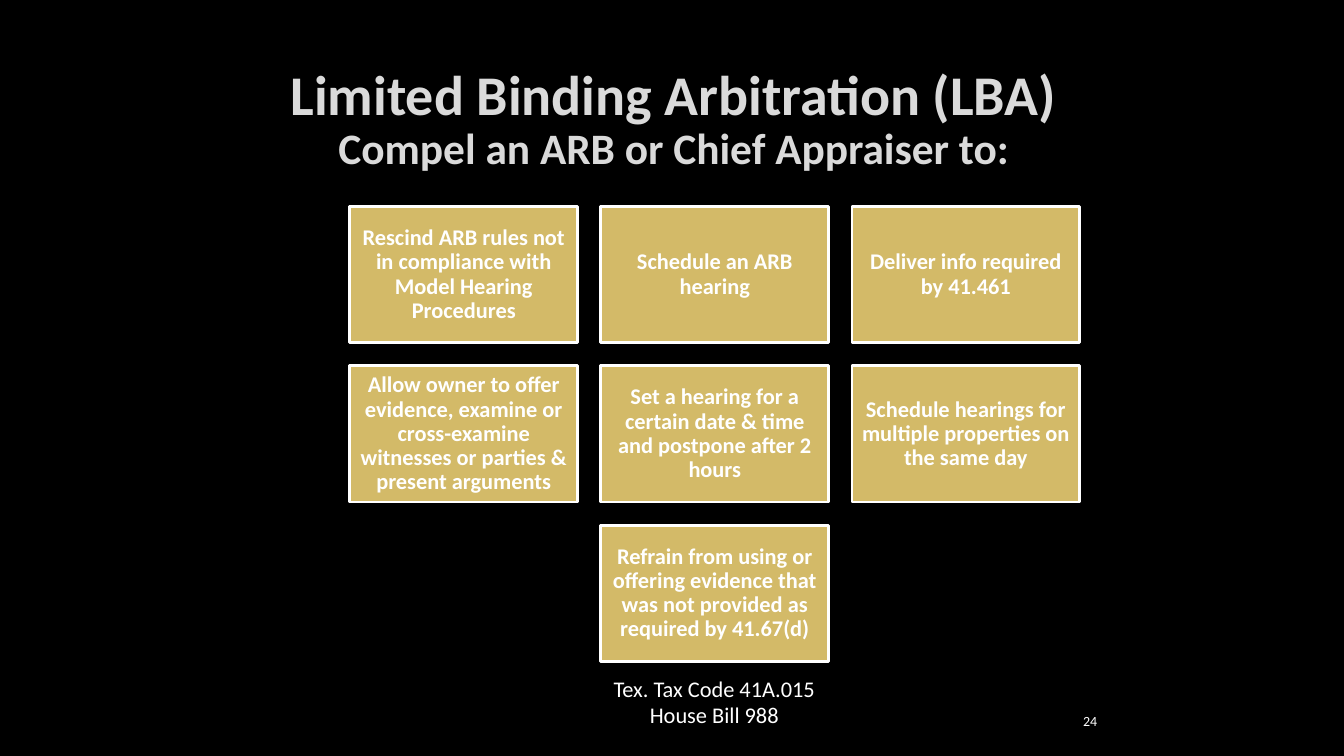
from pptx import Presentation
from pptx.dml.color import RGBColor
from pptx.enum.shapes import MSO_SHAPE
from pptx.enum.text import MSO_ANCHOR, MSO_AUTO_SIZE, PP_ALIGN
from pptx.util import Inches, Pt

RECT = MSO_SHAPE.RECTANGLE
MIDDLE, BOTTOM = MSO_ANCHOR.MIDDLE, MSO_ANCHOR.BOTTOM
CENTER, RIGHT = PP_ALIGN.CENTER, PP_ALIGN.RIGHT
NO_FIT = MSO_AUTO_SIZE.NONE
TITLE_ONLY = 5
COLORS = {"back": "000000", "title": "DADADA", "card": "D3BA68", "text": "FFFFFF"}
FONT = "Calibri"

GRID_LEFT, GRID_TOP, COLUMNS = 3.47, 2.05, 3
CARD_W, CARD_H, GAP = 2.26, 1.35, 0.23
CARD_ROWS = [
    [
        "Rescind ARB rules not in compliance with Model Hearing Procedures",
        "Schedule an ARB hearing",
        "Deliver info required by 41.461",
    ],
    [
        "Allow owner to offer evidence, examine or cross-examine witnesses "
        "or parties & present arguments",
        "Set a hearing for a certain date & time and postpone after 2 hours",
        "Schedule hearings for multiple properties on the same day",
    ],
    [
        "Refrain from using or offering evidence that was not provided "
        "as required by 41.67(d)",
    ],
]


def rgb(name):
    """Return the named colour."""
    return RGBColor.from_string(COLORS[name])


def place(sp, left, top, width, height):
    """Move and size a shape, in inches."""
    sp.left, sp.top = Inches(left), Inches(top)
    sp.width, sp.height = Inches(width), Inches(height)


def style(p, size, color="text", bold=False, align=CENTER):
    """Format one paragraph."""
    p.alignment = align
    p.font.name, p.font.size, p.font.bold = FONT, Pt(size), bold
    p.font.color.rgb = rgb(color)


def add_title(s, box, lines):
    """Fill the title placeholder with lines of (text, size)."""
    sp = s.shapes.title
    place(sp, *box)
    tf = sp.text_frame
    tf.auto_size, tf.vertical_anchor = NO_FIT, BOTTOM
    p = tf.paragraphs[0]
    style(p, lines[0][1], "title", bold=True)
    p.line_spacing = 0.9
    for i, (text, size) in enumerate(lines):
        if i:
            p.add_line_break()
        r = p.add_run()
        r.text, r.font.size = text, Pt(size)


def add_card(s, left, top, text):
    """Add one filled card with centred text."""
    sp = s.shapes.add_shape(RECT, 0, 0, 0, 0)
    place(sp, left, top, CARD_W, CARD_H)
    sp.shadow.inherit = False
    sp.fill.solid()
    sp.fill.fore_color.rgb = rgb("card")
    sp.line.color.rgb = rgb("text")
    sp.line.width = Pt(2)
    tf = sp.text_frame
    tf.word_wrap, tf.vertical_anchor = True, MIDDLE
    tf.margin_left = tf.margin_right = Inches(0.07)
    tf.margin_top = tf.margin_bottom = Inches(0.07)
    p = tf.paragraphs[0]
    p.text = text
    style(p, 16, bold=True)
    p.line_spacing = 0.9


def add_cards(s):
    """Lay the cards out in centred rows."""
    for row, texts in enumerate(CARD_ROWS):
        first = (COLUMNS - len(texts)) / 2
        for col, text in enumerate(texts, 1):
            left = GRID_LEFT + (first + col - 1) * (CARD_W + GAP)
            add_card(s, left, GRID_TOP + row * (CARD_H + GAP), text)


def add_text(s, box, lines, size, align=CENTER):
    """Add a text box with one paragraph per line."""
    sp = s.shapes.add_textbox(0, 0, 0, 0)
    place(sp, *box)
    tf = sp.text_frame
    tf.word_wrap, tf.vertical_anchor = True, MIDDLE
    tf.text = "\n".join(lines)
    for p in tf.paragraphs:
        style(p, size, align=align)


def main():
    """Build and save the slide."""
    prs = Presentation()
    prs.slide_width, prs.slide_height = Inches(13.33), Inches(7.5)
    s = prs.slides.add_slide(prs.slide_layouts[TITLE_ONLY])
    s.background.fill.solid()
    s.background.fill.fore_color.rgb = rgb("back")
    add_title(s, (2.14, 0.29, 9.08, 1.49), [
        ("Limited Binding Arbitration (LBA)", 40),
        ("Compel an ARB or Chief Appraiser to:", 31),
    ])
    add_cards(s)
    add_text(s, (3.75, 6.64, 6.67, 0.64), ["Tex. Tax Code 41A.015", "House Bill 988"], 16)
    add_text(s, (8.73, 6.95, 2.25, 0.4), ["24"], 10, RIGHT)
    prs.save("out.pptx")


if __name__ == "__main__":
    main()
